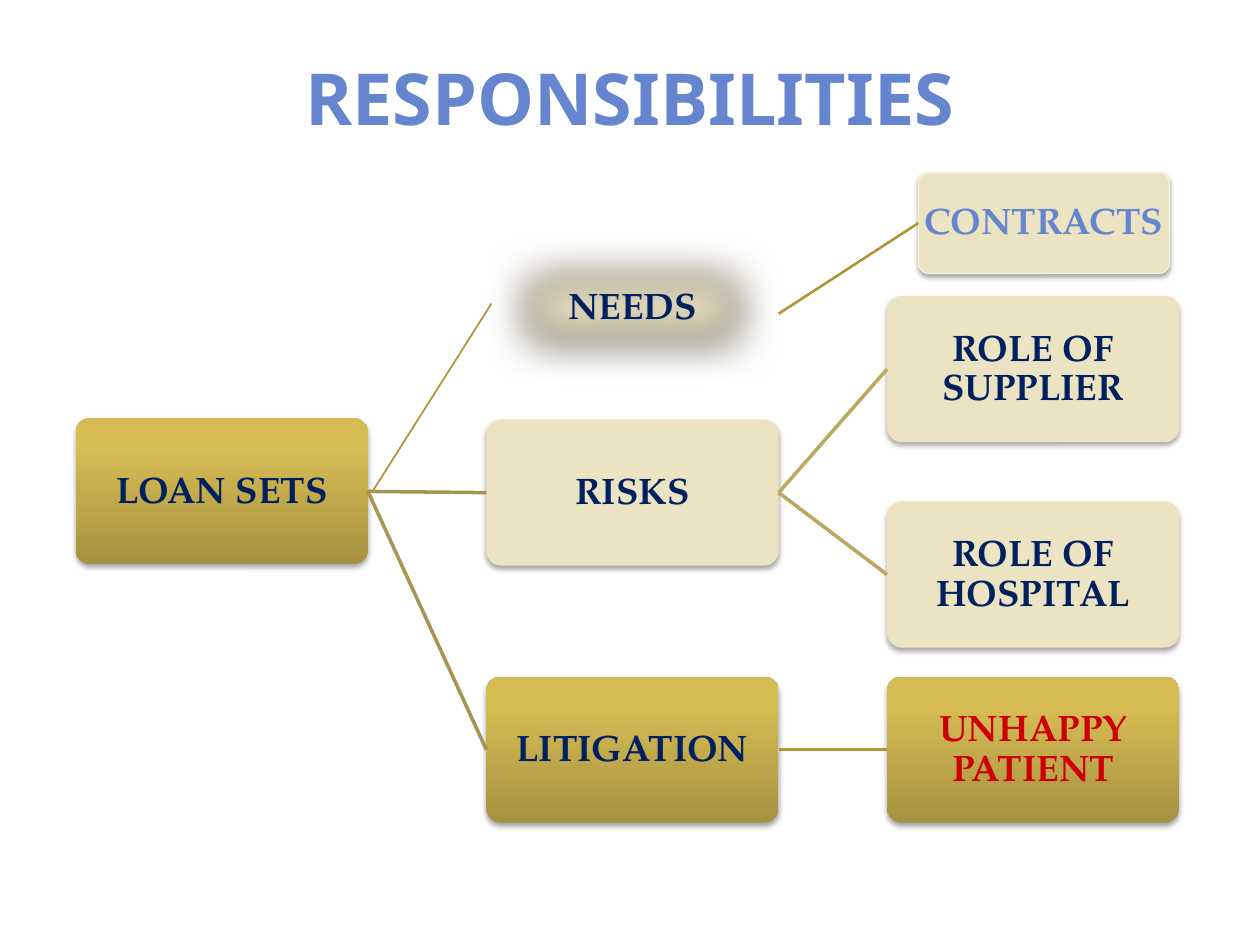
import copy

import pptx
import pptx.chart.data
import pptx.dml.color
import pptx.enum.shapes
import pptx.enum.text
import pptx.oxml
import pptx.oxml.ns
import pptx.util
from pptx.util import Inches

COLORS = {
    "title": "6585CF", "navy": "002060", "red": "CC0000", "cream": "EBE3C2",
    "edge": "F5F1E0", "gold": "AF9738", "dark_gold": "A59452",
    "light_gold": "BBA85D", "shadow": "000000",
}
GOLD_STOPS = [(0, "A59140"), (0.8, "D7BC54"), (1, "DABF52")]
BOX_SIZE = (2.32, 1.16)
COLUMNS = (0.6, 3.86, 7.04)

BOXES = {
    "LOAN SETS": {"place": (COLUMNS[0], 3.32), "gold": True},
    "RISKS": {"place": (COLUMNS[1], 3.33)},
    "ROLE OF SUPPLIER": {"place": (COLUMNS[2], 2.35)},
    "ROLE OF HOSPITAL": {"place": (COLUMNS[2], 3.98)},
    "LITIGATION": {"place": (COLUMNS[1], 5.37), "gold": True},
    "UNHAPPY PATIENT": {"place": (COLUMNS[2], 5.37), "gold": True, "color": "red"},
    "NEEDS": {"place": (COLUMNS[1], 1.86), "edged": True, "opacity": 74, "soft": 25},
    "CONTRACTS": {"place": (7.29, 1.37), "size": (1.99, 0.8), "edged": True,
                  "color": "title"},
}
LINKS = [
    ("LOAN SETS", "RISKS", "dark_gold", 2),
    ("RISKS", "ROLE OF SUPPLIER", "light_gold", 2),
    ("RISKS", "ROLE OF HOSPITAL", "light_gold", 2),
    ("LOAN SETS", "LITIGATION", "dark_gold", 2),
    ("LITIGATION", "UNHAPPY PATIENT", "gold", 2),
    ((2.95, 3.91), (3.9, 2.41), "gold", 1),
    ((6.18, 2.49), "CONTRACTS", "gold", 1.5),
]


def rgb(value):
    """Return the colour for a hex string."""
    return pptx.dml.color.RGBColor.from_string(value)


def write(frame, text, color, size, name, spacing=1.0):
    """Put one bold, centred paragraph in a text frame."""
    frame.text = text
    frame.word_wrap = True
    frame.vertical_anchor = pptx.enum.text.MSO_ANCHOR.MIDDLE
    para = frame.paragraphs[0]
    para.alignment = pptx.enum.text.PP_ALIGN.CENTER
    para.line_spacing = spacing
    font = para.runs[0].font
    for key, value in {"name": name, "size": pptx.util.Pt(size), "bold": True}.items():
        setattr(font, key, value)
    font.color.rgb = rgb(COLORS[color])


def add_title(page, left, top, width, height):
    """Place and format the title placeholder."""
    title = page.shapes.title
    places = {"left": left, "top": top, "width": width, "height": height}
    for key, value in places.items():
        setattr(title, key, Inches(value))
    write(title.text_frame, "RESPONSIBILITIES", "title", 41, "Noto Sans")


def fill_gold(shape):
    """Give a shape the three-stop upward gold gradient."""
    shape.fill.gradient()
    shape.fill.gradient_angle = 90
    stop_list = shape._element.spPr.find(".//" + pptx.oxml.ns.qn("a:gsLst"))
    stop_list.append(copy.deepcopy(stop_list[0]))
    for stop, (position, color) in zip(shape.fill.gradient_stops, GOLD_STOPS):
        stop.position = position
        stop.color.rgb = rgb(color)


def add_effects(shape, opacity, soft):
    """Add a drop shadow and, where asked for, soft edges given in points."""
    shape.shadow.inherit = False
    effects = shape._element.spPr.find(pptx.oxml.ns.qn("a:effectLst"))
    space = pptx.oxml.ns.nsdecls("a")
    effects.append(pptx.oxml.parse_xml(
        f'<a:outerShdw {space} blurRad="{pptx.util.Pt(3.1)}" '
        f'dist="{pptx.util.Pt(1.8)}" dir="5400000" rotWithShape="0">'
        f'<a:srgbClr val="{COLORS["shadow"]}"><a:alpha val="{opacity * 1000}"/>'
        '</a:srgbClr></a:outerShdw>'))
    if soft:
        effects.append(pptx.oxml.parse_xml(
            f'<a:softEdge {space} rad="{pptx.util.Pt(soft)}"/>'))


def add_box(page, text, place, size=BOX_SIZE, gold=False, edged=False,
            color="navy", opacity=35, soft=0):
    """Draw one labelled rounded box and return it."""
    shape = page.shapes.add_shape(
        pptx.enum.shapes.MSO_SHAPE.ROUNDED_RECTANGLE,
        *(Inches(value) for value in place + size))
    shape.adjustments[0] = 0.1
    if gold:
        fill_gold(shape)
    else:
        shape.fill.solid()
        shape.fill.fore_color.rgb = rgb(COLORS["cream"])
    if edged:
        shape.line.color.rgb = rgb(COLORS["edge"])
        shape.line.width = pptx.util.Pt(0.75)
    else:
        shape.line.fill.background()
    add_effects(shape, opacity, soft)
    frame = shape.text_frame
    for side in ("left", "top", "right", "bottom"):
        setattr(frame, f"margin_{side}", Inches(0.01))
    write(frame, text, color, 21, "TeX Gyre Pagella", 0.9)
    return shape


def add_link(page, boxes, start, end, color, width):
    """Draw a line between two ends, each a box name or a point."""
    points = [(0, 0) if end_point in boxes else end_point for end_point in (start, end)]
    line = page.shapes.add_connector(
        pptx.enum.shapes.MSO_CONNECTOR.STRAIGHT,
        *(Inches(value) for point in points for value in point))
    if start in boxes:
        line.begin_connect(boxes[start], 3)
    if end in boxes:
        line.end_connect(boxes[end], 1)
    line.line.color.rgb = rgb(COLORS[color])
    line.line.width = pptx.util.Pt(width)
    line._element.spPr.append(pptx.oxml.parse_xml(
        f'<a:effectLst {pptx.oxml.ns.nsdecls("a")}/>'))


def add_tree(page):
    """Draw the boxes of the tree and the lines between them."""
    boxes = {text: add_box(page, text, **style) for text, style in BOXES.items()}
    for link in LINKS:
        add_link(page, boxes, *link)


def main():
    """Build and save the deck."""
    deck = pptx.Presentation()
    deck.slide_width, deck.slide_height = Inches(10), Inches(7.5)
    page = deck.slides.add_slide(deck.slide_layouts[5])
    add_title(page, 0.5, 0.3, 9, 0.93)
    add_tree(page)
    deck.save("out.pptx")


if __name__ == "__main__":
    main()
